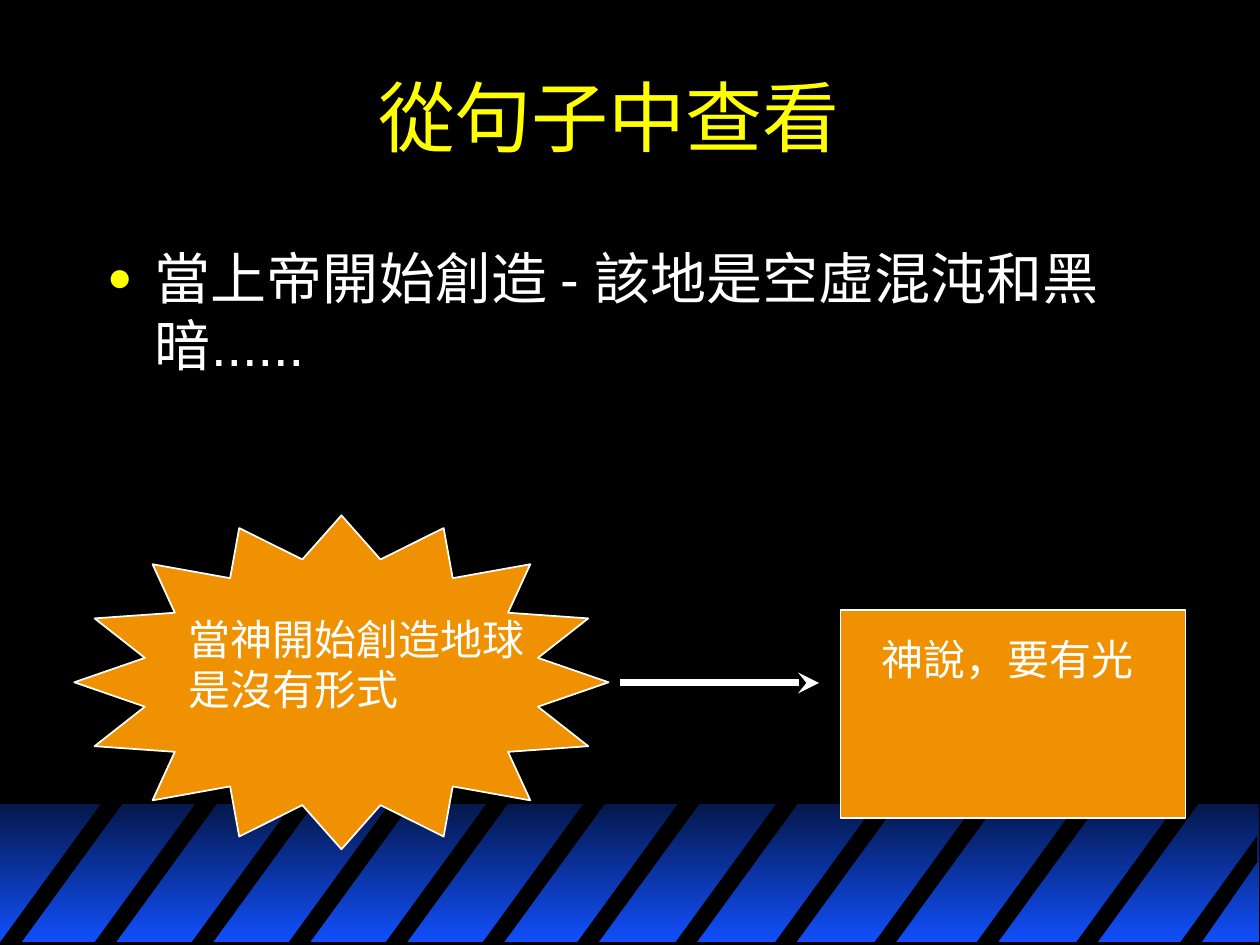
from lxml import etree
from pptx import Presentation
from pptx.dml.color import RGBColor
from pptx.enum.shapes import MSO_CONNECTOR, MSO_SHAPE
from pptx.enum.text import MSO_ANCHOR, MSO_AUTO_SIZE, PP_ALIGN
from pptx.oxml.ns import qn
from pptx.util import Inches, Pt

STAR, RECTANGLE = MSO_SHAPE.STAR_16_POINT, MSO_SHAPE.RECTANGLE
STRAIGHT = MSO_CONNECTOR.STRAIGHT
TOP, MIDDLE = MSO_ANCHOR.TOP, MSO_ANCHOR.MIDDLE
LEFT, CENTER = PP_ALIGN.LEFT, PP_ALIGN.CENTER
NO_FIT = MSO_AUTO_SIZE.NONE

COLORS = {"night": "000000", "navy": "05184B", "blue": "114FFB",
          "yellow": "FFFF00", "white": "FFFFFF", "orange": "EF9100"}
COLUMNS, ROWS = 10, 7.5
STRIPE_LEFTS = (0, 0.75, 1.52, 2.29, 3.06, 3.83, 4.58, 5.36, 6.15, 6.94, 7.75, 8.54)


def color(name):
    return RGBColor.from_string(COLORS[name])


class SlideBuilder:
    def __init__(self, deck):
        self.column = deck.slide_width / COLUMNS
        self.row = deck.slide_height / ROWS
        self.slide = deck.slides.add_slide(deck.slide_layouts[1])
        self.shapes = self.slide.shapes
        background = self.slide.background.fill
        background.solid()
        background.fore_color.rgb = color("night")

    def point(self, x, y):
        return round(x * self.column), round(y * self.row)

    def area(self, left, top, width, height):
        return self.point(left, top) + self.point(width, height)

    def set_text(self, box, text, size, ink="white", font="Arial", align=LEFT, anchor=TOP):
        frame = box.text_frame
        layout = {"word_wrap": True, "auto_size": NO_FIT, "vertical_anchor": anchor}
        for name, value in layout.items():
            setattr(frame, name, value)
        para = frame.paragraphs[0]
        para.alignment = align
        span = para.add_run()
        span.text = text
        for name, value in {"size": Pt(size), "name": font}.items():
            setattr(span.font, name, value)
        span.font.color.rgb = color(ink)
        return para

    def place(self, box, area):
        for name, value in zip(("left", "top", "width", "height"), self.area(*area)):
            setattr(box, name, value)
        return box

    def title(self, text, area):
        box = self.place(self.shapes.title, area)
        self.set_text(box, text, 44, "yellow", "Times New Roman", CENTER, MIDDLE)

    def bullet(self, text, area):
        box = self.place(self.slide.placeholders[1], area)
        properties = self.set_text(box, text, 32)._p.get_or_add_pPr()
        indent = Inches(0.38)
        properties.set("marL", str(indent))
        properties.set("indent", str(-indent))
        tint = etree.SubElement(properties, qn("a:buClr"))
        etree.SubElement(tint, qn("a:srgbClr"), val=COLORS["yellow"])
        etree.SubElement(properties, qn("a:buSzPct"), val="75000")
        etree.SubElement(properties, qn("a:buFont"), typeface="Arial")
        etree.SubElement(properties, qn("a:buChar"), char="●")

    def label(self, text, area):
        self.set_text(self.shapes.add_textbox(*self.area(*area)), text, 24)

    def paint(self, shape, fill, line=None):
        shape.shadow.inherit = False
        shape.fill.solid()
        shape.fill.fore_color.rgb = color(fill)
        if line:
            shape.line.color.rgb = color(line)
            shape.line.width = Pt(1)
        else:
            shape.line.fill.background()

    def panel(self, kind, area):
        shape = self.shapes.add_shape(kind, *self.area(*area))
        self.paint(shape, "orange", "white")

    def gradient_band(self, area):
        band = self.shapes.add_shape(RECTANGLE, *self.area(*area))
        band.shadow.inherit = False
        band.line.fill.background()
        band.fill.gradient()
        band.fill.gradient_angle = 270
        for stop, name, position in zip(band.fill.gradient_stops, ("navy", "blue"), (0, 1)):
            stop.color.rgb = color(name)
            stop.position = position

    def polygon(self, points):
        start, *rest = [self.point(x, y) for x, y in points]
        outline = self.shapes.build_freeform(*start)
        outline.add_line_segments(rest, close=True)
        self.paint(outline.convert_to_shape(), "night")

    def arrow(self, start, end):
        line = self.shapes.add_connector(STRAIGHT, *self.point(*start), *self.point(*end))
        line.line.color.rgb = color("white")
        line.line.width = Pt(4)
        etree.SubElement(line.line._get_or_add_ln(), qn("a:tailEnd"), type="stealth")
        etree.SubElement(line._element.spPr, qn("a:effectLst"))


def main():
    deck = Presentation()
    deck.slide_width, deck.slide_height = Inches(COLUMNS), Inches(ROWS)
    page = SlideBuilder(deck)

    page.gradient_band((0, 6.38, 9.99, 1.1))
    top, bottom, slant, thickness = 6.34, 7.48, 0.83, 0.17
    for left in STRIPE_LEFTS:
        page.polygon([(left, bottom), (left + slant, top),
                      (left + slant + thickness, top), (left + thickness, bottom)])
    page.polygon([(9.36, 7.49), (9.98, 6.63), (9.98, 6.84), (9.53, 7.49)])

    page.title("從句子中查看\t", (0.75, 0.25, 8.5, 1.33))
    page.bullet("當上帝開始創造 - 該地是空虛混沌和黑暗......", (0.75, 1.88, 8.5, 4.54))
    page.panel(STAR, (0.59, 4.09, 4.24, 2.65))
    page.label("當神開始創造地球是沒有形式", (1.4, 4.82, 2.91, 1.3))
    page.arrow((4.92, 5.42), (6.5, 5.42))
    page.panel(RECTANGLE, (6.67, 4.84, 2.74, 1.65))
    page.label("神說，要有光", (6.9, 4.98, 2.31, 1.3))
    deck.save("out.pptx")


if __name__ == "__main__":
    main()
